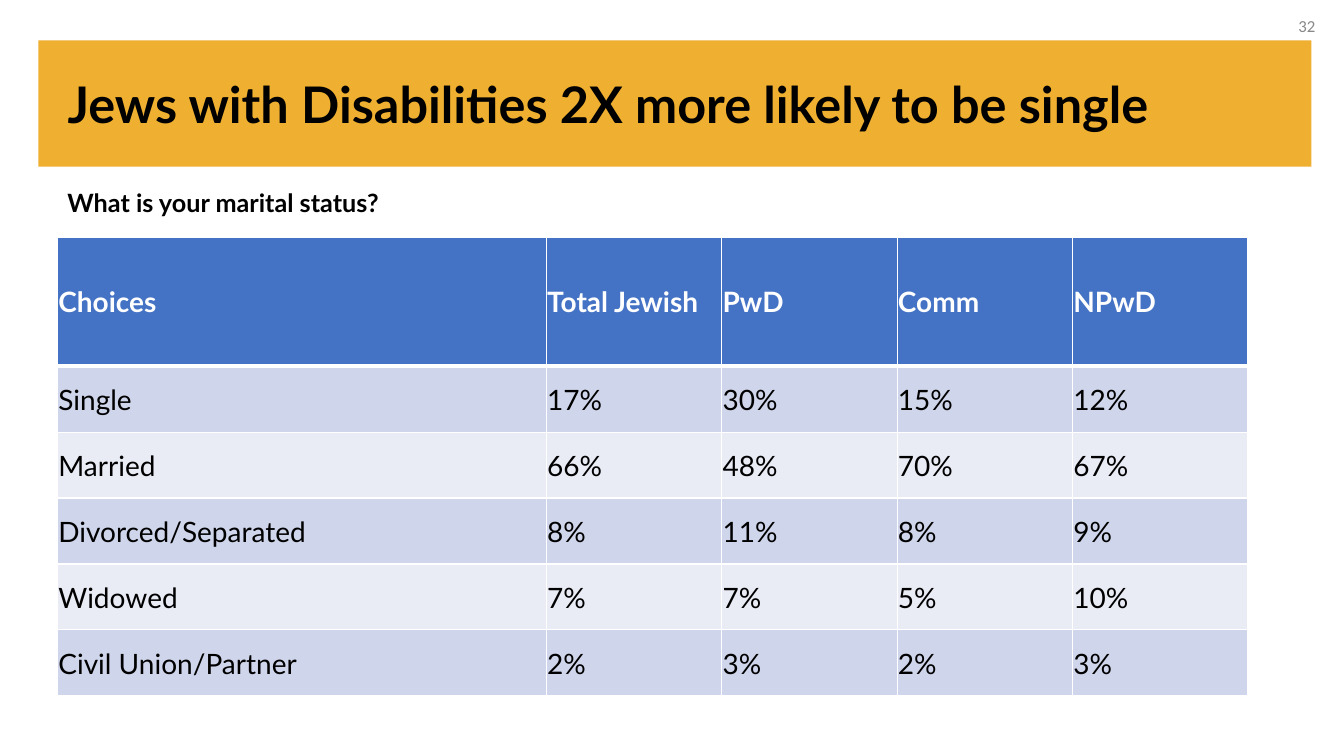
from lxml import etree
from pptx import Presentation
from pptx.dml.color import RGBColor
from pptx.enum.shapes import MSO_SHAPE
from pptx.enum.text import MSO_ANCHOR, PP_ALIGN
from pptx.oxml.ns import qn
from pptx.util import Cm, Pt

RECTANGLE = MSO_SHAPE.RECTANGLE
MIDDLE = MSO_ANCHOR.MIDDLE
LEFT, RIGHT = PP_ALIGN.LEFT, PP_ALIGN.RIGHT

BLACK = RGBColor(0x00, 0x00, 0x00)
WHITE = RGBColor(0xFF, 0xFF, 0xFF)
GRAY = RGBColor(0x88, 0x88, 0x88)
GOLD = RGBColor(0xEF, 0xAF, 0x30)
BLUE = RGBColor(0x44, 0x72, 0xC4)
DARK_BAND = RGBColor(0xCF, 0xD5, 0xEA)
LIGHT_BAND = RGBColor(0xE9, 0xEB, 0xF5)

MARITAL_STATUS = [
    ("Choices", "Total Jewish", "PwD", "Comm", "NPwD"),
    ("Single", "17%", "30%", "15%", "12%"),
    ("Married", "66%", "48%", "70%", "67%"),
    ("Divorced/Separated", "8%", "11%", "8%", "9%"),
    ("Widowed", "7%", "7%", "5%", "10%"),
    ("Civil Union/Partner", "2%", "3%", "2%", "3%"),
]


def write(text_frame, text, size=20, color=BLACK, bold=False, font="Lato", align=LEFT):
    text_frame.word_wrap = True
    paragraph = text_frame.paragraphs[0]
    paragraph.alignment = align
    run = paragraph.add_run()
    run.text = text
    run.font.name = font
    run.font.size = Pt(size)
    run.font.bold = bold
    run.font.color.rgb = color


def add_border(cell, side, width):
    properties = cell._tc.get_or_add_tcPr()
    line = etree.SubElement(properties, qn("a:" + side), w=str(Pt(width)))
    fill = etree.SubElement(line, qn("a:solidFill"))
    etree.SubElement(fill, qn("a:srgbClr"), val=str(WHITE))


presentation = Presentation()
presentation.slide_width = Cm(33.87)
presentation.slide_height = Cm(19.05)
slide = presentation.slides.add_slide(presentation.slide_layouts[5])

# Title on its gold banner
title = slide.shapes.title
title.left, title.top, title.width, title.height = Cm(1.45), Cm(1.02), Cm(29.51), Cm(3.18)
title.text_frame.vertical_anchor = MIDDLE
write(title.text_frame, "Jews with Disabilities 2X more likely to be single", size=36, bold=True)

banner = slide.shapes.add_shape(RECTANGLE, Cm(0.97), Cm(1.02), Cm(32.08), Cm(3.18))
banner.shadow.inherit = False
banner.fill.solid()
banner.fill.fore_color.rgb = GOLD
banner.line.fill.background()
title.element.addprevious(banner.element)

# Page number
page_number = slide.shapes.add_textbox(Cm(25.78), Cm(0.13), Cm(7.62), Cm(1.02))
page_number.text_frame.vertical_anchor = MIDDLE
write(page_number.text_frame, "32", size=12, color=GRAY, font="Calibri", align=RIGHT)

# Survey question
question = slide.shapes.add_textbox(Cm(1.45), Cm(4.6), Cm(29.51), Cm(1.02))
write(question.text_frame, "What is your marital status?", size=18, bold=True)

# Table of answers
table = slide.shapes.add_table(
    len(MARITAL_STATUS), len(MARITAL_STATUS[0]), Cm(1.45), Cm(5.97), Cm(30), Cm(11.56)
).table
for index, column in enumerate(table.columns):
    column.width = Cm(4.42) if index else Cm(12.32)
for index, row in enumerate(table.rows):
    row.height = Cm(1.66) if index else Cm(3.26)

for row_index, answers in enumerate(MARITAL_STATUS):
    is_header = row_index == 0
    band = BLUE if is_header else DARK_BAND if row_index % 2 else LIGHT_BAND
    for column_index, text in enumerate(answers):
        cell = table.cell(row_index, column_index)
        cell.vertical_anchor = MIDDLE
        cell.margin_left = cell.margin_right = cell.margin_top = Cm(0.02)
        cell.margin_bottom = 0
        add_border(cell, "lnL", 1)
        add_border(cell, "lnR", 1)
        add_border(cell, "lnT", 3 if row_index == 1 else 1)
        add_border(cell, "lnB", 3 if is_header else 1)
        cell.fill.solid()
        cell.fill.fore_color.rgb = band
        write(cell.text_frame, text, color=WHITE if is_header else BLACK, bold=is_header)

presentation.save("out.pptx")
